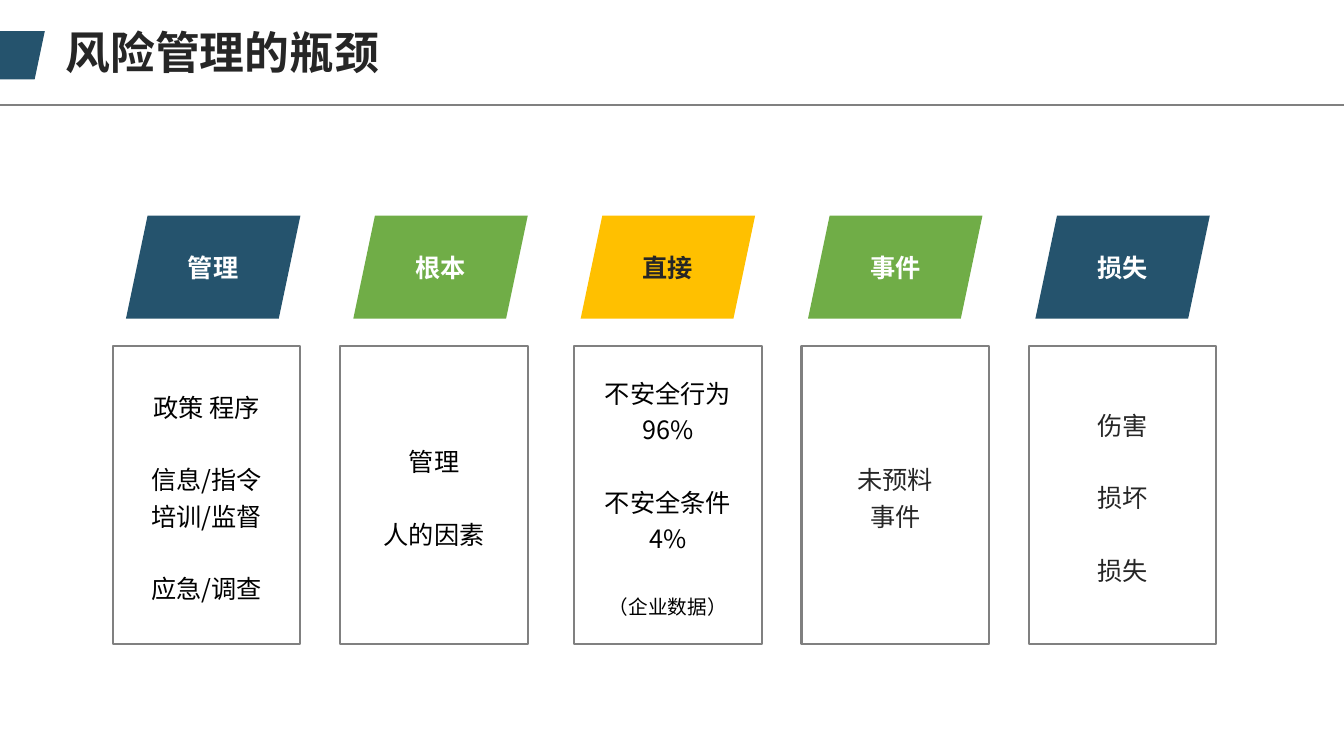
from dataclasses import dataclass

from lxml import etree
from pptx import Presentation
from pptx.dml.color import RGBColor
from pptx.enum import shapes as sh, text as tx
from pptx.oxml import ns
from pptx.util import Pt

FONT = "Noto Sans CJK SC"
HUES = {"navy": "25536D", "green": "70AD47", "gold": "FFC000",
        "gray": "808080", "ink": "262626", "black": "000000", "white": "FFFFFF"}
WIDE, HIGH = 960, 540
STEP = 162.4  # distance between columns
GAP = 26      # space between groups of lines


@dataclass
class Stage:
    name: str
    fill: str
    groups: list[list[str]]
    head: str = "white"
    body: str = "black"
    note: str = ""      # small closing line
    shift: float = 0    # offset of the panel from the even grid


STAGES = [
    Stage("管理", "navy", [["政策 程序"], ["信息/指令", "培训/监督"], ["应急/调查"]]),
    Stage("根本", "green", [["管理"], ["人的因素"]]),
    Stage("直接", "gold", [["不安全行为", "96%"], ["不安全条件", "4%"]],
          head="ink", note="（企业数据）", shift=4.7),
    Stage("事件", "green", [["未预料", "事件"]], body="ink", shift=4.7),
    Stage("损失", "navy", [["伤害"], ["损坏"], ["损失"]], body="ink", shift=4.7),
]


def rgb(hue: str) -> RGBColor:
    return RGBColor.from_string(HUES[hue])


def style(para, size: float, hue: str, bold: bool = False,
          align=tx.PP_ALIGN.CENTER, lead: float = 1.0) -> None:
    para.alignment, para.line_spacing = align, lead
    font = para.font
    font.name, font.size, font.bold = FONT, Pt(size), bold
    font.color.rgb = rgb(hue)
    # East Asian glyphs need their own typeface entry
    props = para._p.pPr.find(ns.qn("a:defRPr"))
    east = etree.SubElement(props, ns.qn("a:ea"))
    east.set("typeface", FONT)


def add_box(slide, kind, left: float, top: float, width: float, height: float,
            fill: str = "", line: str = ""):
    box = slide.shapes.add_shape(kind, Pt(left), Pt(top), Pt(width), Pt(height))
    box.shadow.inherit = False
    if fill:
        box.fill.solid()
        box.fill.fore_color.rgb = rgb(fill)
    else:
        box.fill.background()
    if line:
        box.line.color.rgb, box.line.width = rgb(line), Pt(1.5)
    else:
        box.line.fill.background()
    box.text_frame.vertical_anchor = tx.MSO_ANCHOR.MIDDLE
    return box


def add_slant(slide, left: float, top: float, width: float, height: float, fill: str):
    slant = add_box(slide, sh.MSO_SHAPE.PARALLELOGRAM, left, top, width, height, fill)
    slant.adjustments[0] = 0.21
    return slant


def add_head(slide, title: str) -> None:
    add_slant(slide, -16, 22.2, 48, 34.5, "navy")
    rule = slide.shapes.add_connector(
        sh.MSO_CONNECTOR.STRAIGHT, Pt(0), Pt(75), Pt(WIDE), Pt(75))
    rule.line.color.rgb, rule.line.width = rgb("gray"), Pt(1.75)
    etree.SubElement(rule._element.spPr, ns.qn("a:effectLst"))

    name = slide.shapes.title
    name.left, name.top, name.width, name.height = Pt(39.6), Pt(18), Pt(241), Pt(42.5)
    frame = name.text_frame
    frame.text = title
    frame.auto_size = tx.MSO_AUTO_SIZE.NONE
    frame.vertical_anchor = tx.MSO_ANCHOR.MIDDLE
    style(frame.paragraphs[0], 32, "ink", True, tx.PP_ALIGN.LEFT, 0.9)


def add_stage(slide, stage: Stage, col: int) -> None:
    # Slanted label
    label = add_slant(slide, 90 + col * STEP, 154, 124.6, 73.6, stage.fill)
    label.text_frame.word_wrap = False
    label.text_frame.text = stage.name
    style(label.text_frame.paragraphs[0], 18, stage.head, True)

    # Panel with grouped lines
    panel = add_box(slide, sh.MSO_SHAPE.RECTANGLE, 80.6 + col * STEP + stage.shift,
                    247, 134, 213, line="gray")
    frame = panel.text_frame
    groups = stage.groups + ([[stage.note]] if stage.note else [])
    frame.text = "\n".join(line for group in groups for line in group)
    starts = {sum(map(len, groups[:n])) for n in range(1, len(groups))}
    for row, para in enumerate(frame.paragraphs):
        size = 14 if para.text == stage.note else 18
        style(para, size, stage.body, lead=1.2)
        if row in starts:
            para.space_before = Pt(GAP)


def main() -> None:
    deck = Presentation()
    deck.slide_width, deck.slide_height = Pt(WIDE), Pt(HIGH)
    slide = deck.slides.add_slide(deck.slide_layouts[5])
    add_head(slide, "风险管理的瓶颈")
    for col, stage in enumerate(STAGES):
        add_stage(slide, stage, col)
    deck.save("out.pptx")


if __name__ == "__main__":
    main()
